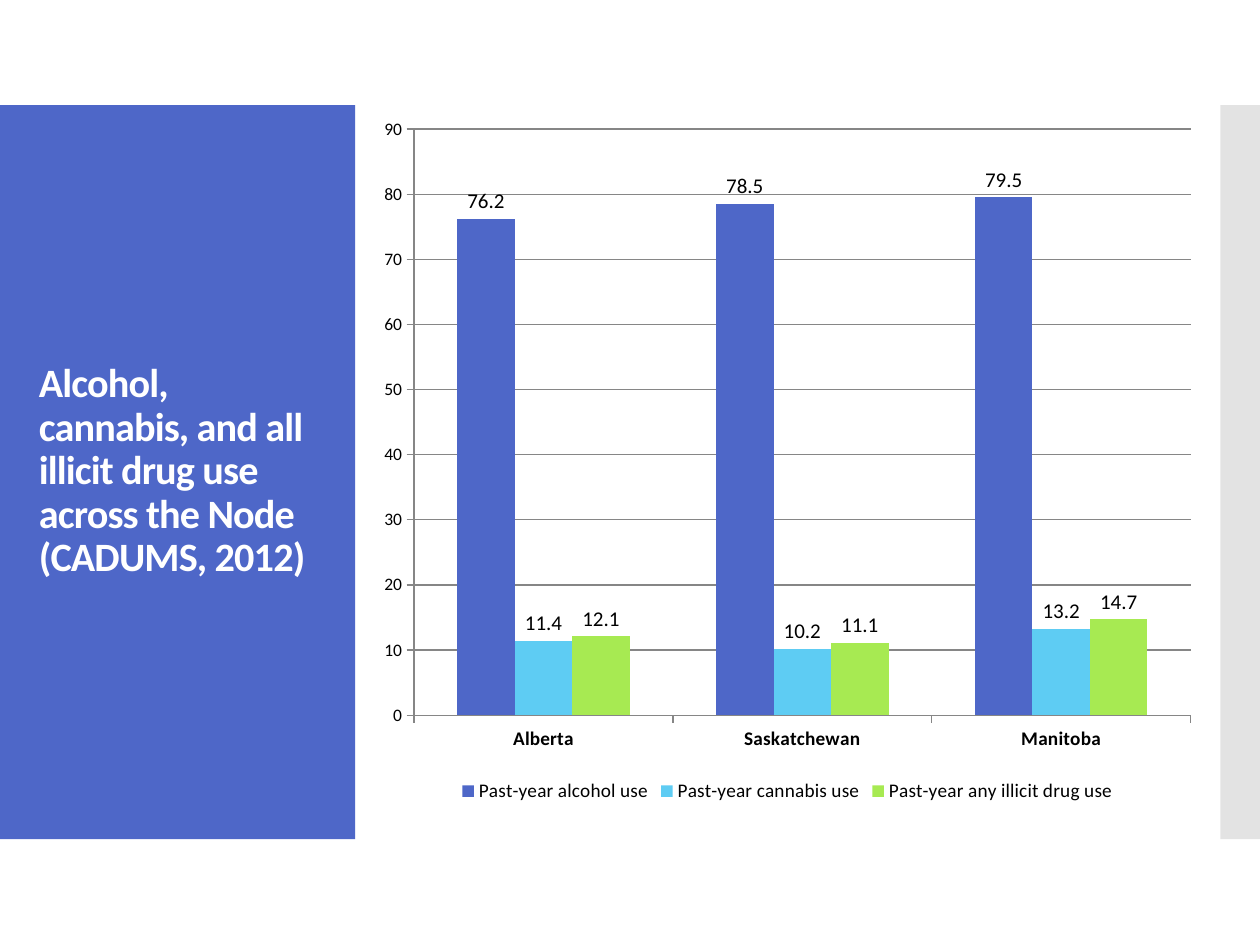
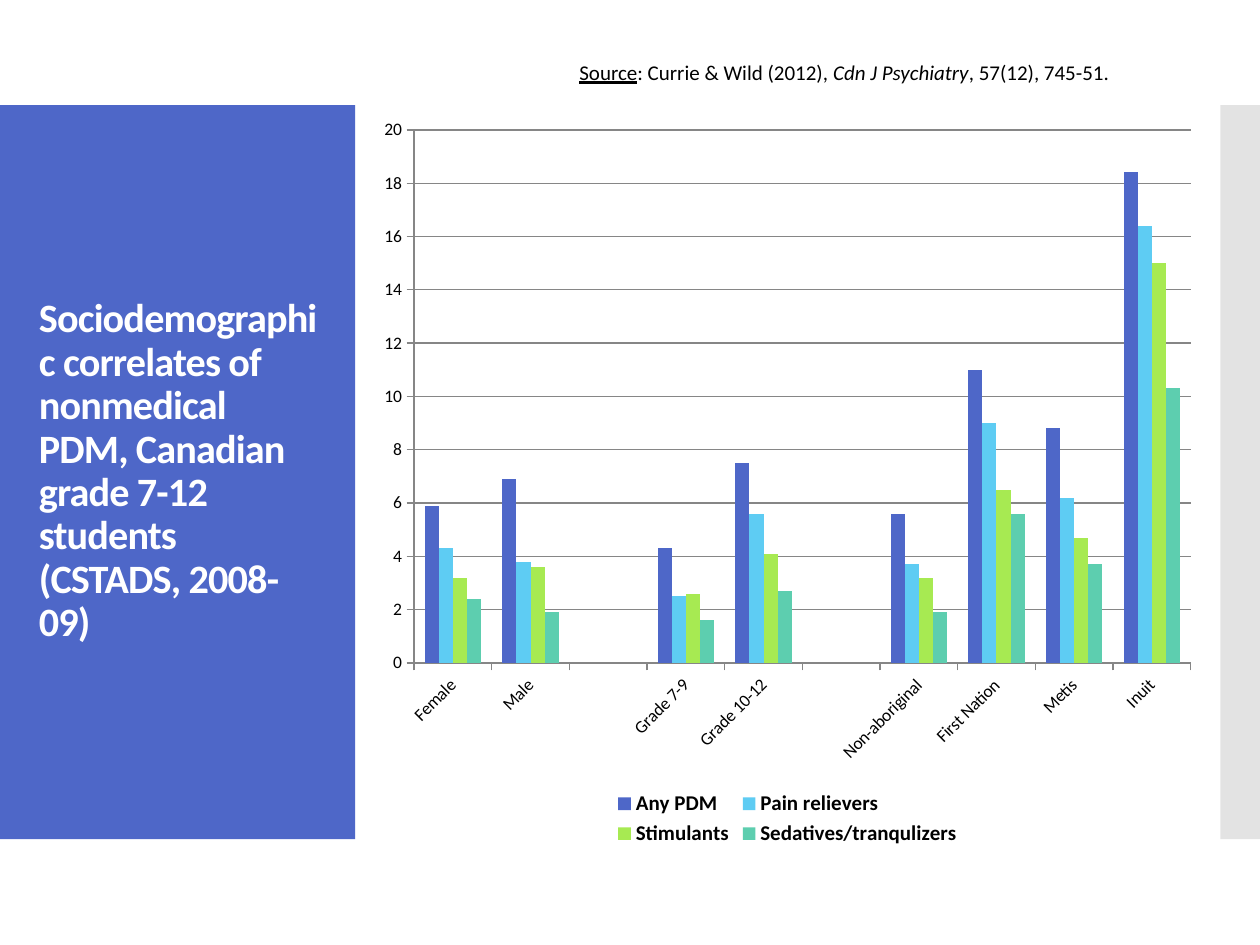
from dataclasses import dataclass

from lxml.etree import SubElement
from pptx import Presentation
from pptx.chart.data import CategoryChartData
from pptx.dml.color import RGBColor
from pptx.enum.chart import XL_CHART_TYPE, XL_LABEL_POSITION, XL_LEGEND_POSITION, XL_TICK_MARK
from pptx.enum.shapes import MSO_SHAPE
from pptx.enum.text import MSO_ANCHOR, MSO_AUTO_SIZE, PP_ALIGN
from pptx.oxml.ns import qn
from pptx.util import Cm, Pt


@dataclass(frozen=True)
class Theme:
    font: str = "Calibri"
    white: RGBColor = RGBColor(0xFF, 0xFF, 0xFF)
    black: RGBColor = RGBColor(0, 0, 0)
    grid: RGBColor = RGBColor(0x86, 0x86, 0x86)
    edge: RGBColor = RGBColor(0xC8, 0xC8, 0xC8)
    series: tuple = tuple(map(RGBColor.from_string, ("4E67C8", "5ECCF3", "A7EA52", "5DCEAF")))
    title: Pt = Pt(23)
    text: Pt = Pt(12)
    legend: Pt = Pt(11)
    axis: Pt = Pt(10)


T = Theme()


def style(font, size, color=T.black, bold=False):
    font.name, font.size, font.bold = T.font, size, bold
    font.color.rgb = color


# Content of the two slides
charts = [
    dict(
        title="Alcohol, cannabis, and all illicit drug use across the Node (CADUMS, 2012)",
        height=14.17, top_value=90, step=10, labels=True, angle=0,
        cat_font=(T.legend, T.black, True), legend_font=(T.legend,),
        cats=["Alberta", "Saskatchewan", "Manitoba"],
        series={
            "Past-year alcohol use": [76.2, 78.5, 79.5],
            "Past-year cannabis use": [11.4, 10.2, 13.2],
            "Past-year any illicit drug use": [12.1, 11.1, 14.7],
        },
    ),
    dict(
        title="Sociodemographic correlates of nonmedical PDM, Canadian grade 7-12 students "
              "(CSTADS, 2008-09)",
        height=15.04, top_value=20, step=2, labels=False, angle=-45,
        cat_font=(T.axis,), legend_font=(T.text, T.black, True),
        cats=["Female", "Male", "", "Grade 7-9", "Grade 10-12", "",
              "Non-aboriginal", "First Nation", "Metis", "Inuit"],
        series={
            "Any PDM": [5.9, 6.9, None, 4.3, 7.5, None, 5.6, 11, 8.8, 18.4],
            "Pain relievers": [4.3, 3.8, None, 2.5, 5.6, None, 3.7, 9, 6.2, 16.4],
            "Stimulants": [3.2, 3.6, None, 2.6, 4.1, None, 3.2, 6.5, 4.7, 15],
            "Sedatives/tranqulizers": [2.4, 1.9, None, 1.6, 2.7, None, 1.9, 5.6, 3.7, 10.3],
        },
    ),
]

prs = Presentation()
prs.slide_width, prs.slide_height = Cm(25.4), Cm(19.05)
layout = prs.slide_layouts[5]
slides = [prs.slides.add_slide(layout) for _ in charts]

# Side bands, moved to the layout so that both slides share them
for left, width, color, alpha in ((0, 7.16, T.series[0], 100), (24.6, 0.8, T.edge, 50)):
    band = slides[0].shapes.add_shape(MSO_SHAPE.RECTANGLE, Cm(left), Cm(2.12), Cm(width), Cm(14.8))
    band.shadow.inherit = False
    band.fill.solid()
    band.fill.fore_color.rgb = color
    band.line.fill.background()
    if alpha < 100:
        clr = band.element.spPr.find(qn("a:solidFill"))[0]
        SubElement(clr, qn("a:alpha")).set("val", str(alpha * 1000))
    layout.shapes.element.insert(2, band.element)

for s, c in zip(slides, charts):
    # Title on the blue band
    title = s.shapes.title
    title.left, title.top, title.width, title.height = Cm(0.53), Cm(3.12), Cm(6.15), Cm(12.78)
    tf = title.text_frame
    tf.text = c["title"]
    tf.word_wrap, tf.auto_size = True, MSO_AUTO_SIZE.NONE
    tf.vertical_anchor = MSO_ANCHOR.MIDDLE
    p = tf.paragraphs[0]
    p.alignment, p.line_spacing = PP_ALIGN.LEFT, 0.9
    style(p.font, T.title, T.white, True)
    p.runs[0].font._element.set("spc", "-50")

    # Column chart
    data = CategoryChartData(number_format="General")
    data.categories = c["cats"]
    for name, values in c["series"].items():
        data.add_series(name, values)
    chart = s.shapes.add_chart(XL_CHART_TYPE.COLUMN_CLUSTERED, Cm(7.41), Cm(2.12),
                               Cm(16.93), Cm(c["height"]), data).chart
    chart.has_title = False
    style(chart.font, T.axis)
    plot = chart.plots[0]
    plot.gap_width, plot.overlap, plot.vary_by_categories = 150, 0, False
    for ser, color in zip(plot.series, T.series):
        ser.format.fill.solid()
        ser.format.fill.fore_color.rgb = color
        ser.invert_if_negative = False
    if c["labels"]:
        plot.has_data_labels = True
        plot.data_labels.show_value = True
        plot.data_labels.position = XL_LABEL_POSITION.OUTSIDE_END
        style(plot.data_labels.font, T.text)

    # Axes and grid
    cat, val = chart.category_axis, chart.value_axis
    val.minimum_scale, val.maximum_scale, val.major_unit = 0, c["top_value"], c["step"]
    val.has_major_gridlines = True
    for axis in (cat, val):
        axis.major_tick_mark, axis.minor_tick_mark = XL_TICK_MARK.OUTSIDE, XL_TICK_MARK.NONE
    for line in (cat.format.line, val.format.line, val.major_gridlines.format.line):
        line.color.rgb, line.width = T.grid, Pt(0.75)
    style(val.tick_labels.font, T.axis)
    style(cat.tick_labels.font, *c["cat_font"])
    if c["angle"]:
        body = cat._element.find(qn("c:txPr")).find(qn("a:bodyPr"))
        body.set("rot", str(c["angle"] * 60000))
        body.set("vert", "horz")

    # Legend
    chart.has_legend = True
    chart.legend.position = XL_LEGEND_POSITION.BOTTOM
    chart.legend.include_in_layout = False
    style(chart.legend.font, *c["legend_font"])

# Source line above the second chart
tf = slides[1].shapes.add_textbox(Cm(11.43), Cm(1.07), Cm(12.47), Cm(0.77)).text_frame
tf.word_wrap = True
p = tf.paragraphs[0]
style(p.font, T.text)
for text in ("Source", ": Currie & Wild (2012), ", "Cdn J Psychiatry", ", 57(12), 745-51."):
    p.add_run().text = text
p.runs[0].font.underline = True
p.runs[2].font.italic = True

prs.save("out.pptx")
